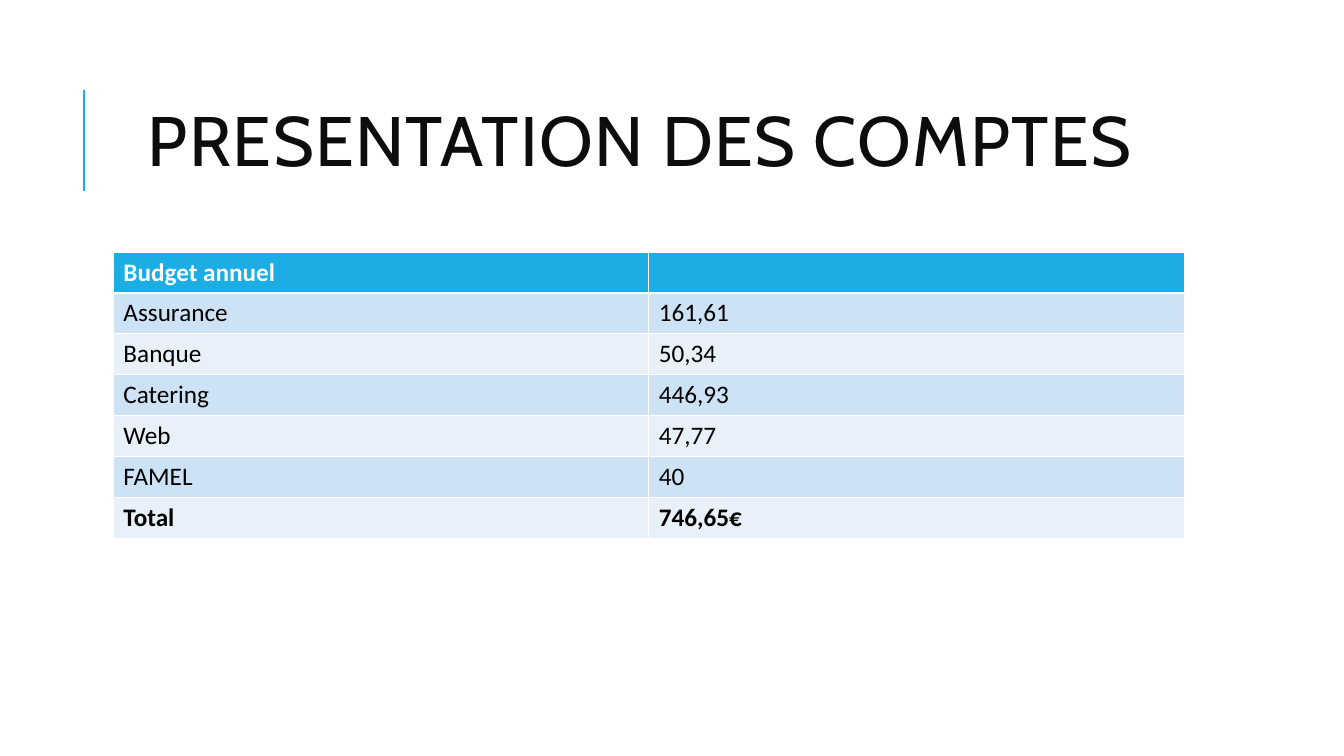
from dataclasses import dataclass

from lxml import etree
from pptx import Presentation
from pptx.dml.color import RGBColor
from pptx.enum.shapes import MSO_CONNECTOR
from pptx.enum.text import MSO_ANCHOR, MSO_AUTO_SIZE, PP_ALIGN
from pptx.oxml.ns import qn
from pptx.util import Pt

STRAIGHT = MSO_CONNECTOR.STRAIGHT
MIDDLE = MSO_ANCHOR.MIDDLE
NO_AUTOFIT = MSO_AUTO_SIZE.NONE
CENTER = PP_ALIGN.CENTER
EMU_PER_PX = 9525
TITLE_ONLY = 5


@dataclass(frozen=True)
class Theme:
    """Colours, fonts and type sizes of the slide."""
    accent: str = "1CADE4"
    title: str = "0D0D0D"
    header_text: str = "FFFFFF"
    body_text: str = "000000"
    bands: tuple = ("CDE3F5", "E8F1FA")
    title_font: str = "Cabin"
    body_font: str = "Calibri"
    title_size: int = 50
    body_size: int = 18
    title_tracking: int = 100
    rule_width: float = 1.5


THEME = Theme()
BUDGET = [
    ("Budget annuel", ""),
    ("Assurance", "161,61"),
    ("Banque", "50,34"),
    ("Catering", "446,93"),
    ("Web", "47,77"),
    ("FAMEL", "40"),
    ("Total", "746,65€"),
]


def px(length):
    """Turn whole pixels into EMU."""
    return length * EMU_PER_PX


def style_font(font, name, size, color, bold=False):
    """Apply typeface, size, colour and weight to a font."""
    font.name = name
    font.size = Pt(size)
    font.color.rgb = RGBColor.from_string(color)
    font.bold = bold


def add_accent_rule(slide, left, top, height):
    """Draw the vertical rule beside the title."""
    rule = slide.shapes.add_connector(
        STRAIGHT, px(left), px(top + height), px(left), px(top))
    rule.line.color.rgb = RGBColor.from_string(THEME.accent)
    rule.line.width = Pt(THEME.rule_width)
    etree.SubElement(rule._element.spPr, qn("a:effectLst"))


def place_title(slide, heading, left, top, width, height):
    """Move the title placeholder into its box and format it."""
    title = slide.shapes.title
    title.left, title.top = px(left), px(top)
    title.width, title.height = px(width), px(height)
    frame = title.text_frame
    frame.text = heading
    frame.word_wrap = True
    frame.auto_size = NO_AUTOFIT
    frame.vertical_anchor = MIDDLE
    paragraph = frame.paragraphs[0]
    paragraph.alignment = CENTER
    paragraph.line_spacing = 0.8
    font = paragraph.runs[0].font
    style_font(font, THEME.title_font, THEME.title_size, THEME.title)
    font._element.set("spc", str(THEME.title_tracking))


def add_budget_table(slide, entries, left, top, width, height):
    """Fill the box with a banded table that has a header and a total."""
    budget = slide.shapes.add_table(
        len(entries), len(entries[0]),
        px(left), px(top), px(width), px(height)).table
    for row in budget.rows:
        row.height = px(height // len(entries))
    last = len(entries) - 1
    for row_index, entry in enumerate(entries):
        header = row_index == 0
        band = THEME.accent if header else THEME.bands[(row_index - 1) % 2]
        color = THEME.header_text if header else THEME.body_text
        for column_index, wording in enumerate(entry):
            cell = budget.cell(row_index, column_index)
            cell.fill.solid()
            cell.fill.fore_color.rgb = RGBColor.from_string(band)
            cell.text_frame.text = wording
            for run in cell.text_frame.paragraphs[0].runs:
                style_font(run.font, THEME.body_font, THEME.body_size,
                           color, row_index in (0, last))


def main():
    """Build the accounts slide and save it."""
    deck = Presentation()
    deck.slide_width, deck.slide_height = px(1280), px(720)
    slide = deck.slides.add_slide(deck.slide_layouts[TITLE_ONLY])
    add_accent_rule(slide, 80, 86, 96)
    place_title(slide, "PRESENTATION DES COMPTES ", 108, 61, 1020, 157)
    add_budget_table(slide, BUDGET, 108, 240, 1020, 273)
    deck.save("out.pptx")


if __name__ == "__main__":
    main()
